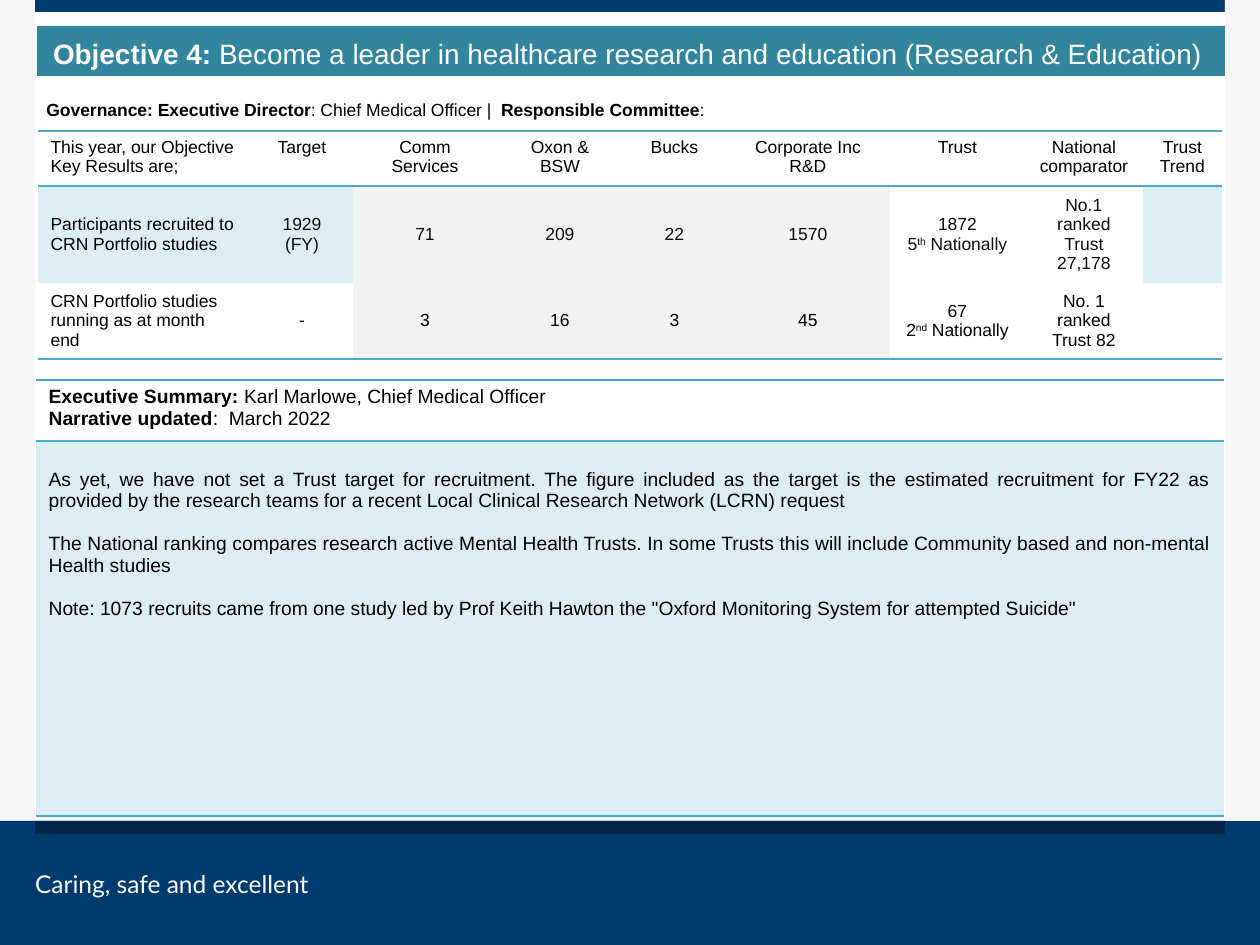
"""Build the Objective 4 research and education performance slide."""
from lxml import etree
from pptx import Presentation
from pptx.dml.color import RGBColor
from pptx.enum.shapes import MSO_SHAPE
from pptx.enum.text import MSO_ANCHOR, PP_ALIGN
from pptx.oxml.ns import qn
from pptx.util import Pt

PX = 914400 / 126
RECTANGLE = MSO_SHAPE.RECTANGLE
TOP, MIDDLE = MSO_ANCHOR.TOP, MSO_ANCHOR.MIDDLE
LEFT, CENTER, JUSTIFY = PP_ALIGN.LEFT, PP_ALIGN.CENTER, PP_ALIGN.JUSTIFY
NAVY, TEAL, PALE, GREY, WHITE, BLACK = "003B6F", "4BACC6", "DBEEF4", "F2F2F2", "FFFFFF", "000000"


def color(hex_value):
    return RGBColor.from_string(hex_value)


def write(paragraph, text, size, hex_value, font="Arial"):
    """Write text in which *stars* mark bold and ^carets^ mark superscript."""
    for bold, part in enumerate(text.split("*")):
        for raised, piece in enumerate(part.split("^")):
            if piece:
                run = paragraph.add_run()
                run.text = piece
                run.font.name = font
                run.font.size = Pt(size)
                run.font.bold = bold % 2 == 1
                run.font.color.rgb = color(hex_value)
                if raised % 2:
                    run.font._element.set("baseline", "30000")


presentation = Presentation()
presentation.slide_width = round(1260 * PX)
presentation.slide_height = round(945 * PX)
slide = presentation.slides.add_slide(presentation.slide_layouts[6])

bands = [
    (0, 0, 35, 821, "F5F5F5"),
    (0, 821, 1260, 124, NAVY),
    (35, 821, 1190, 13, "002648"),
    (35, 0, 1190, 12, NAVY),
    (1225, 0, 35, 821, "F5F5F5"),
    (37, 26, 1188, 50, "31859C"),
]
for *box, fill in bands:
    shape = slide.shapes.add_shape(RECTANGLE, *[round(value * PX) for value in box])
    shape.shadow.inherit = False
    shape.fill.solid()
    shape.fill.fore_color.rgb = color(fill)
    shape.line.fill.background()

title = shape.text_frame
title.word_wrap = True
title.vertical_anchor = MIDDLE
title.margin_left, title.margin_right = round(16 * PX), round(9 * PX)
title.margin_top = title.margin_bottom = round(5 * PX)
title.paragraphs[0].alignment = LEFT
title.paragraphs[0].line_spacing = 1.15
write(title.paragraphs[0],
      "*Objective 4: *Become a leader in healthcare research and education (Research & Education)",
      16, WHITE)

labels = [
    ((35, 869, 387, 30), 0, "Caring, safe and excellent", 14, WHITE, "Lato"),
    ((34, 93, 1191, 34), 6,
     "*Governance: Executive Director*: Chief Medical Officer |  *Responsible Committee*:",
     10, BLACK, "Arial"),
]
for box, margin, text, size, hex_value, font in labels:
    frame = slide.shapes.add_textbox(*[round(value * PX) for value in box]).text_frame
    frame.word_wrap = True
    frame.margin_left = frame.margin_right = round(margin * 2.1 * PX)
    frame.margin_top = frame.margin_bottom = round(margin * PX)
    write(frame.paragraphs[0], text, size, hex_value, font)

results = [
    ["This year, our Objective Key Results are;", "Target", "Comm Services", "Oxon & BSW", "Bucks",
     "Corporate Inc R&D", "Trust", "National comparator", "Trust Trend"],
    ["Participants recruited to CRN Portfolio studies", "1929 (FY)", "71", "209", "22", "1570",
     "1872\n5^th^ Nationally", "No.1 ranked Trust 27,178", ""],
    ["CRN Portfolio studies running as at month end", "-", "3", "16", "3", "45",
     "67\n2^nd^ Nationally", "No. 1 ranked Trust 82", ""],
]
result_fills = [
    [None] * 9,
    [PALE] * 2 + [GREY] * 4 + [WHITE] * 2 + [PALE],
    [None] * 2 + [GREY] * 4 + [WHITE] * 3,
]
summary = [
    ["*Executive Summary:* Karl Marlowe, Chief Medical Officer\n*Narrative updated*:  March 2022"],
    ["As yet, we have not set a Trust target for recruitment. The figure included as the target is "
     "the estimated recruitment for FY22 as provided by the research teams for a recent Local "
     "Clinical Research Network (LCRN) request\n"
     "The National ranking compares research active Mental Health Trusts. In some Trusts this will "
     "include Community based and non-mental Health studies\n"
     "Note: 1073 recruits came from one study led by Prof Keith Hawton the "
     "\"Oxford Monitoring System for attempted Suicide\""],
]
tables = [
    (38, 131, [213, 102, 144, 126, 103, 164, 135, 118, 79], [55, 97, 76], results, result_fills, 10),
    (36, 380, [1188], [61, 375], summary, [[None], [PALE]], 11),
]
for left, top, widths, heights, rows, fills, size in tables:
    box = left, top, sum(widths), sum(heights)
    table = slide.shapes.add_table(
        len(rows), len(widths), *[round(value * PX) for value in box]).table
    table.first_row = table.horz_banding = False
    for column, width in zip(table.columns, widths):
        column.width = round(width * PX)
    for row, height in zip(table.rows, heights):
        row.height = round(height * PX)
    for row_index, texts in enumerate(rows):
        ruled = {"lnT": row_index < 2, "lnB": row_index in (0, len(rows) - 1)}
        for column_index, text in enumerate(texts):
            cell = table.cell(row_index, column_index)
            properties = cell._tc.get_or_add_tcPr()
            for side in ("lnL", "lnR", "lnT", "lnB"):
                line = etree.SubElement(properties, qn(f"a:{side}"), w="12700")
                if ruled.get(side):
                    solid = etree.SubElement(line, qn("a:solidFill"))
                    etree.SubElement(solid, qn("a:srgbClr"), val=TEAL)
                else:
                    etree.SubElement(line, qn("a:noFill"))
            fill = fills[row_index][column_index]
            if fill:
                cell.fill.solid()
                cell.fill.fore_color.rgb = color(fill)
            else:
                cell.fill.background()
            narrative = rows is summary and row_index == 1
            cell.vertical_anchor = MIDDLE if rows is results and row_index else TOP
            if narrative:
                cell.margin_top = round(28 * PX)
            for index, line_text in enumerate(text.split("\n")):
                frame = cell.text_frame
                paragraph = frame.add_paragraph() if index else frame.paragraphs[0]
                paragraph.alignment = JUSTIFY if narrative else CENTER if column_index else LEFT
                if narrative and index:
                    paragraph.space_before = Pt(12.3)
                dark = row_index == 1 and column_index
                write(paragraph, line_text, size, "0D0D0D" if dark else BLACK)

presentation.save("out.pptx")
